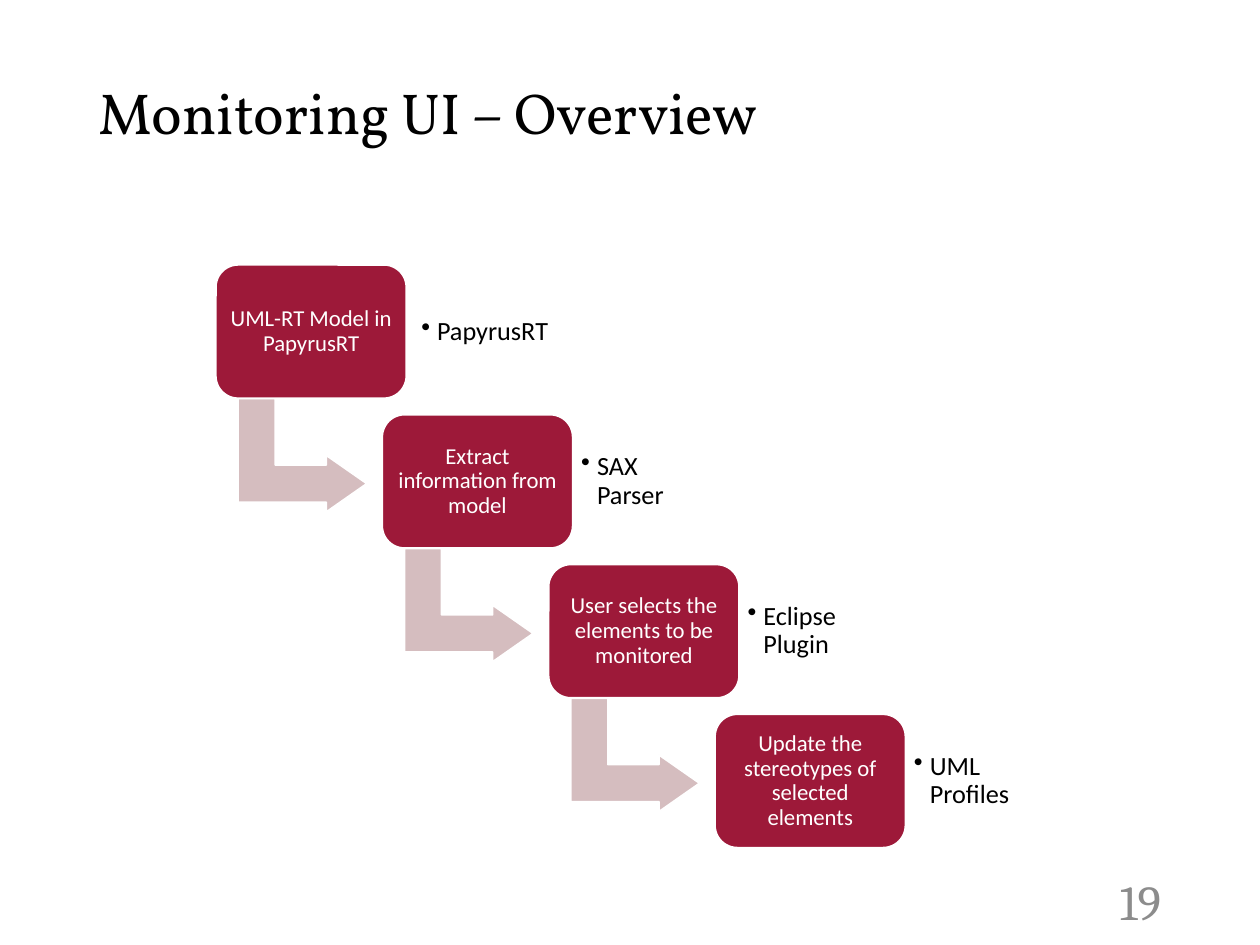
from dataclasses import dataclass

from lxml.etree import SubElement
from pptx import Presentation
from pptx.dml.color import RGBColor
from pptx.enum.shapes import MSO_SHAPE
from pptx.enum.text import MSO_ANCHOR, PP_ALIGN
from pptx.oxml.ns import qn
from pptx.util import Pt


@dataclass(frozen=True)
class Theme:
    card: str = "9D1939"
    arrow: str = "D5BDBF"
    light: str = "FFFFFF"
    dark: str = "000000"
    muted: str = "8C8C8C"
    title_font: str = "Vollkorn"
    number_font: str = "Cambria"
    body_font: str = "Calibri"
    title_size: float = 33
    number_size: float = 28
    label_size: float = 15
    card_size: float = 13


THEME = Theme()

STEPS = [
    ("UML-RT Model in PapyrusRT", "PapyrusRT"),
    ("Extract information from model", "SAX Parser"),
    ("User selects the elements to be monitored", "Eclipse Plugin"),
    ("Update the stereotypes of selected elements", "UML Profiles"),
]
CARD_WIDTH, CARD_HEIGHT = 108.8, 76.2
LABEL_HEIGHT = 61.8


def write_text(shape, text, *, font, size, color, align=PP_ALIGN.LEFT,
               inset=(7.2, 3.6), line_spacing=0.9, bullet_indent=None):
    """Fill a shape with one vertically centred paragraph."""
    frame = shape.text_frame
    frame.word_wrap = True
    frame.vertical_anchor = MSO_ANCHOR.MIDDLE
    frame.margin_left = frame.margin_right = Pt(inset[0])
    frame.margin_top = frame.margin_bottom = Pt(inset[1])
    para = frame.paragraphs[0]
    para.alignment = align
    para.line_spacing = line_spacing
    if bullet_indent:
        para.level = 1
        properties = para._p.get_or_add_pPr()
        properties.set("marL", str(Pt(bullet_indent)))
        properties.set("indent", str(-Pt(bullet_indent)))
        SubElement(properties, qn("a:buChar"), char="•")
    span = para.add_run()
    span.text = text
    span.font.name = font
    span.font.size = Pt(size)
    span.font.color.rgb = RGBColor.from_string(color)


def add_text(page, box, text, **text_format):
    shape = page.shapes.add_textbox(*map(Pt, box))
    write_text(shape, text, **text_format)


def add_block(page, kind, box, fill, adjustments):
    """Add a filled preset shape with a thin white outline."""
    shape = page.shapes.add_shape(kind, *map(Pt, box))
    shape.shadow.inherit = False
    shape.fill.solid()
    shape.fill.fore_color.rgb = RGBColor.from_string(fill)
    shape.line.color.rgb = RGBColor.from_string(THEME.light)
    shape.line.width = Pt(1)
    for index, value in enumerate(adjustments):
        shape.adjustments[index] = value
    return shape


def add_title(page, box):
    add_text(page, box, "Monitoring UI – Overview", font=THEME.title_font,
             size=THEME.title_size, color=THEME.dark)


def add_page_number(page, box):
    add_text(page, box, "19", font=THEME.number_font, size=THEME.number_size,
             color=THEME.muted, align=PP_ALIGN.RIGHT, line_spacing=1)


def add_step(page, left, top, task, tool, is_first, is_last):
    """Place a card, its tool label and the arrow to the next card."""
    if not is_last:
        arrow_box = (left + 17, top + 72, 64.8, 73.6)
        arrow = add_block(page, MSO_SHAPE.BENT_UP_ARROW, arrow_box,
                          THEME.arrow, (0.328, 0.25, 0.358))
        arrow.rotation = 90
    card = add_block(page, MSO_SHAPE.ROUNDED_RECTANGLE,
                     (left, top, CARD_WIDTH, CARD_HEIGHT), THEME.card, (0.167,))
    write_text(card, task, font=THEME.body_font, size=THEME.card_size,
               color=THEME.light, align=PP_ALIGN.CENTER, inset=(3.6, 3.6))
    gap, label_width = (4.2, 99.4) if is_first else (0.6, 79.2)
    label_top = top + (CARD_HEIGHT - LABEL_HEIGHT) / 2
    add_text(page, (left + CARD_WIDTH + gap, label_top, label_width, LABEL_HEIGHT),
             tool, font=THEME.body_font, size=THEME.label_size, color=THEME.dark,
             inset=(4.3, 4.3), bullet_indent=9)


def add_staircase(page, box):
    """Step the cards down evenly, from the box's top left corner to its bottom right."""
    left, top, width, height = box
    last = len(STEPS) - 1
    step_x = (width - CARD_WIDTH) / last
    step_y = (height - CARD_HEIGHT) / last
    for index, (task, tool) in enumerate(STEPS):
        add_step(page, left + index * step_x, top + index * step_y, task, tool,
                 is_first=index == 0, is_last=index == last)


def main():
    deck = Presentation()
    deck.slide_width, deck.slide_height = Pt(720), Pt(540)
    page = deck.slides.add_slide(deck.slide_layouts[6])
    add_page_number(page, (508.5, 500.5, 162, 28.8))
    add_title(page, (49.5, 23, 621, 86.4))
    add_staircase(page, (123.4, 151.4, 394, 333))
    deck.save("out.pptx")


if __name__ == "__main__":
    main()
